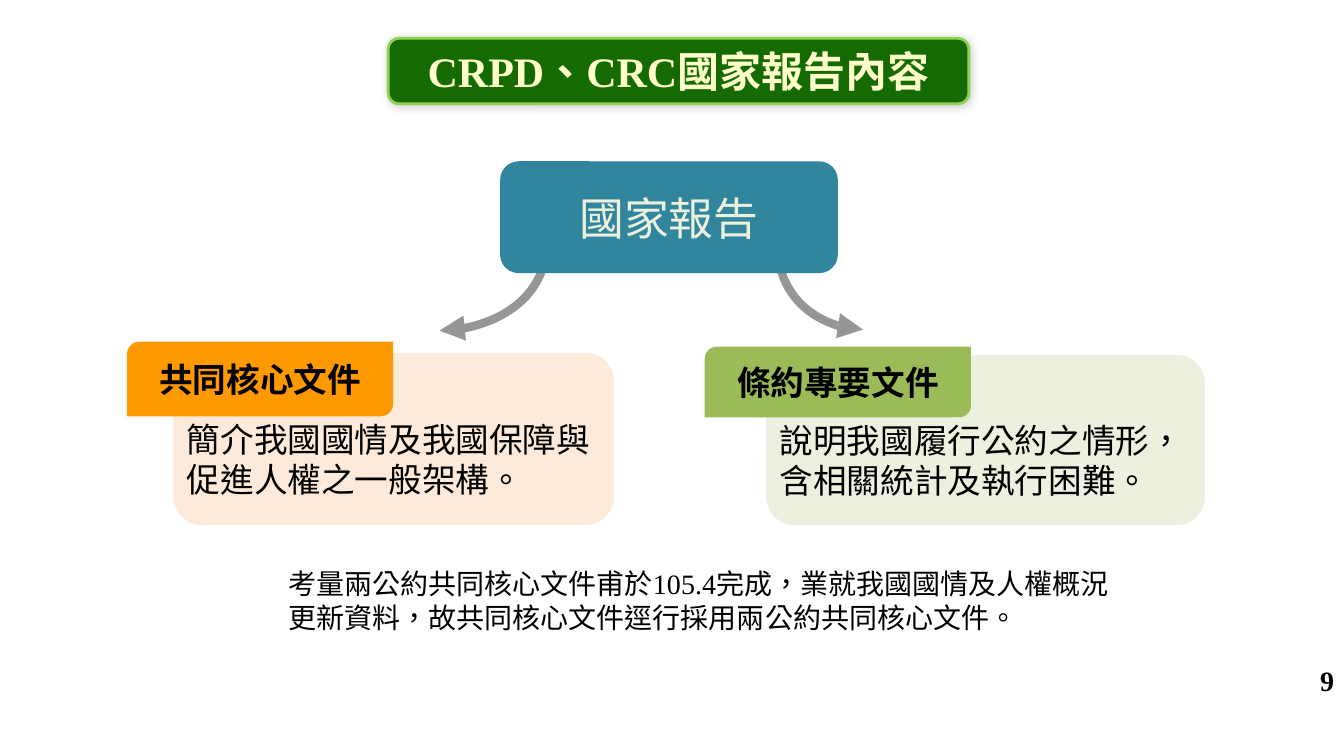
from lxml import etree
from pptx import Presentation
from pptx import util as u
from pptx.dml.color import RGBColor
from pptx.enum import lang, shapes, text
from pptx.oxml import parse_xml
from pptx.oxml.ns import nsdecls, qn

COLORS = {
    "black": "000000", "cream": "FFFFCC", "forest": "156B01", "lime": "92D050",
    "teal": "31859C", "mist": "EBF1DE", "peach": "FDEADA", "orange": "FF9900",
    "olive": "9BBB59", "gray": "969696",
}
SANS = "Noto Sans CJK SC"
SERIF = "Times New Roman"
CENTER = text.PP_ALIGN.CENTER
LEFT = text.PP_ALIGN.LEFT
RIGHT = text.PP_ALIGN.RIGHT
MIDDLE = text.MSO_ANCHOR.MIDDLE
ROUND = shapes.MSO_SHAPE.ROUNDED_RECTANGLE
TAB = shapes.MSO_SHAPE.ROUND_2_DIAG_RECTANGLE


class SlideBuilder:
    def __init__(self, page):
        self.page = page

    def color(self, name):
        return RGBColor.from_string(COLORS[name])

    def fill_text(self, box, words, size, font=SANS, color="black", bold=False,
                  align=CENTER, anchor=MIDDLE, insets=(0.1, 0.05, 0.1, 0.05)):
        frame = box.text_frame
        frame.word_wrap = True
        frame.vertical_anchor = anchor
        (frame.margin_left, frame.margin_top,
         frame.margin_right, frame.margin_bottom) = map(u.Inches, insets)
        para = frame.paragraphs[0]
        para.text = words
        para.alignment = align
        style = para.font
        style.size = u.Pt(size)
        style.bold = bold
        style.name = font
        style.color.rgb = self.color(color)
        style.language_id = lang.MSO_LANGUAGE_ID.TRADITIONAL_CHINESE
        latin = para._p.pPr.find(qn("a:defRPr")).find(qn("a:latin"))
        latin.addnext(parse_xml(f'<a:ea {nsdecls("a")} typeface="{SANS}"/>'))

    def label(self, place, words, size, **style):
        box = self.page.shapes.add_textbox(*map(u.Inches, place))
        self.fill_text(box, words, size, **style)

    def block(self, kind, place, fill, words, size, adjust=None, **style):
        box = self.page.shapes.add_shape(kind, *map(u.Inches, place))
        box.shadow.inherit = False
        box.fill.solid()
        box.fill.fore_color.rgb = self.color(fill)
        box.line.fill.background()
        if adjust is not None:
            box.adjustments[0] = adjust
        self.fill_text(box, words, size, **style)
        return box

    def title(self, place, words):
        box = self.block(ROUND, place, "forest", words, 30, font=SERIF,
                         color="cream", bold=True)
        box.line.color.rgb = self.color("lime")
        box.line.width = u.Pt(2)
        effects = box._element.spPr.find(qn("a:effectLst"))
        effects.append(parse_xml(
            f'<a:outerShdw {nsdecls("a")} blurRad="{u.Pt(6)}" dist="{u.Pt(1)}" '
            f'dir="2700000"><a:srgbClr val="{COLORS["black"]}">'
            '<a:alpha val="20000"/></a:srgbClr></a:outerShdw>'))

    def curved_arrow(self, tip, tail):
        start = [u.Inches(value) for value in tip]
        end = [u.Inches(value) for value in tail]
        builder = self.page.shapes.build_freeform(*start)
        builder.add_line_segments([end], close=False)
        arrow = builder.convert_to_shape()
        arrow.shadow.inherit = False
        arrow.fill.background()
        arrow.line.color.rgb = self.color("gray")
        arrow.line.width = u.Pt(6)
        outline = arrow._element.spPr.find(qn("a:ln"))
        etree.SubElement(outline, qn("a:headEnd"), type="triangle")
        segment = next(arrow._element.iter(qn("a:lnTo")))
        segment.tag = qn("a:cubicBezTo")
        dx, dy = end[0] - start[0], end[1] - start[1]
        controls = [(start[0] + 0.55 * dx, start[1]), (end[0], end[1] - 0.55 * dy)]
        for index, (x, y) in enumerate(controls):
            point = etree.Element(qn("a:pt"), x=str(int(x - arrow.left)),
                                  y=str(int(y - arrow.top)))
            segment.insert(index, point)


def main():
    deck = Presentation()
    deck.slide_width, deck.slide_height = u.Inches(13.33), u.Inches(7.5)
    slide = SlideBuilder(deck.slides.add_slide(deck.slide_layouts[6]))

    slide.label((12.74, 6.59, 0.59, 0.31), "9", 20, font=SERIF, bold=True, align=RIGHT)
    slide.title((3.85, 0.38, 5.76, 0.65), "CRPD、CRC國家報告內容")

    cards = [
        ((1.72, 3.5, 4.37, 1.71), "peach", "簡介我國國情及我國保障與促進人權之一般架構。"),
        ((7.6, 3.52, 4.35, 1.69), "mist", "說明我國履行公約之情形，含相關統計及執行困難。"),
    ]
    for place, fill, words in cards:
        slide.block(ROUND, place, fill, words, 24, adjust=0.167, align=LEFT,
                    insets=(0.05, 0.45, 0.05, 0.05))

    for tip, tail in [((4.36, 3.28), (5.43, 2.37)), ((8.56, 3.27), (7.7, 2.35))]:
        slide.curved_arrow(tip, tail)

    slide.block(ROUND, (4.96, 1.6, 3.35, 1.11), "teal", "國家報告", 32,
                adjust=0.167, color="mist", insets=(0.05,) * 4)

    tabs = [
        ((1.26, 3.39, 2.64, 0.74), "orange", "共同核心文件"),
        ((6.99, 3.44, 2.64, 0.7), "olive", "條約專要文件"),
    ]
    for place, fill, words in tabs:
        slide.block(TAB, place, fill, words, 24, bold=True)

    slide.label((2.76, 5.57, 8.46, 0.77),
                "考量兩公約共同核心文件甫於105.4完成，業就我國國情及人權概況更新資料，"
                "故共同核心文件逕行採用兩公約共同核心文件。",
                20, font=SERIF, align=LEFT, anchor=text.MSO_ANCHOR.TOP)

    deck.save("out.pptx")


if __name__ == "__main__":
    main()
